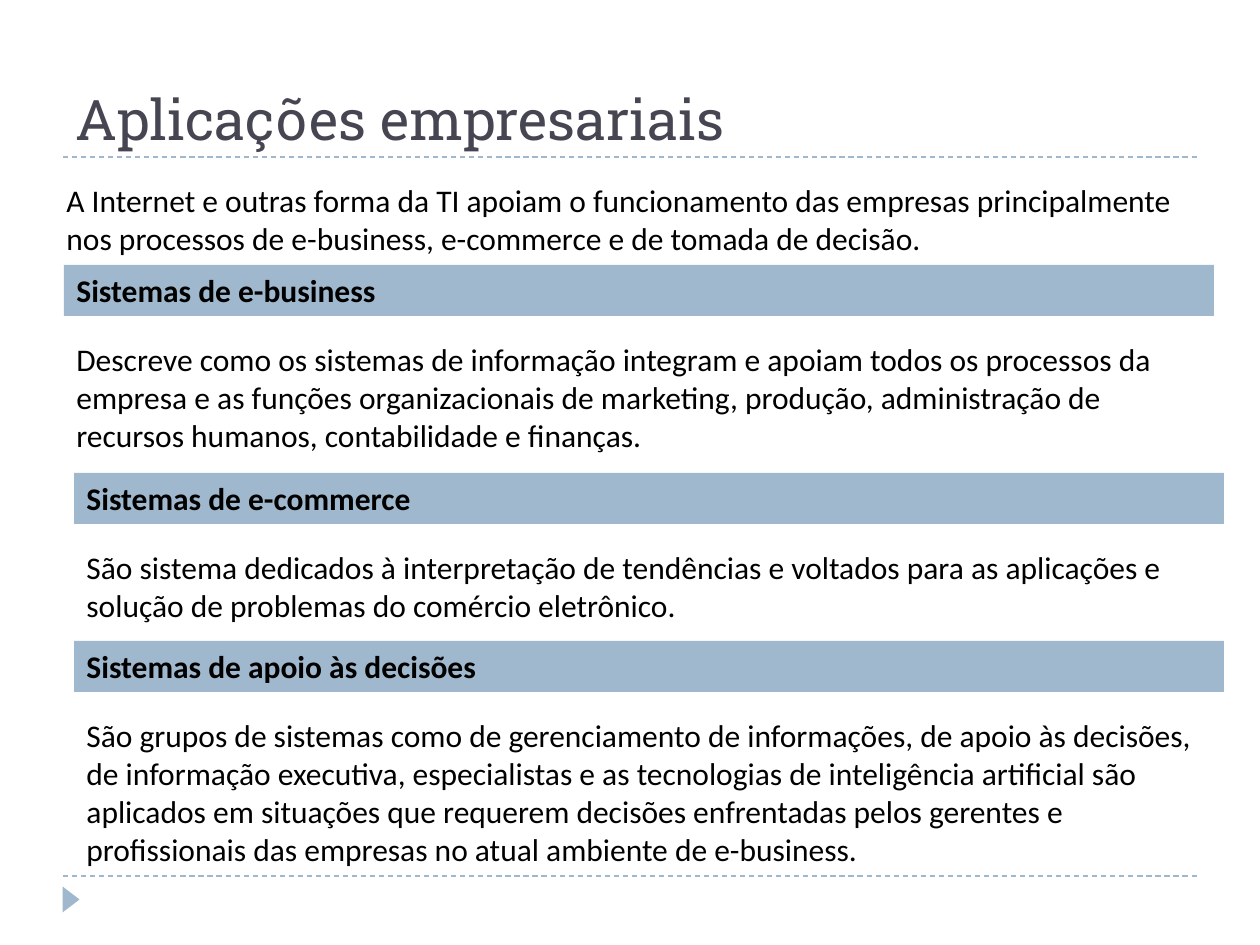
import pptx
import pptx.util
import pptx.dml.color
import pptx.enum.dml
import pptx.enum.shapes
import pptx.enum.text
import lxml.etree

RGB = pptx.dml.color.RGBColor
BLUE = RGB(0x9F, 0xB8, 0xCD)
SLATE = RGB(0x46, 0x46, 0x53)
BLACK = RGB(0, 0, 0)
KIND = pptx.enum.shapes.MSO_SHAPE
ANCHOR = pptx.enum.text.MSO_ANCHOR

TITLE = "Aplicações empresariais"
INTRO = ("A Internet e outras forma da TI apoiam o funcionamento das empresas "
         "principalmente nos processos de e-business, e-commerce e de tomada de decisão.")
# left, top, body height, heading, body
PARTS = [
    (64, 265, 127, "Sistemas de e-business",
     "Descreve como os sistemas de informação integram e apoiam todos os processos da "
     "empresa e as funções organizacionais de marketing, produção, administração de "
     "recursos humanos, contabilidade e finanças."),
    (74, 473, 89, "Sistemas de e-commerce",
     "São sistema dedicados à interpretação de tendências e voltados para as aplicações "
     "e solução de problemas do comércio eletrônico."),
    (74, 641, 165, "Sistemas de apoio às decisões",
     "São grupos de sistemas como de gerenciamento de informações, de apoio às decisões, "
     "de informação executiva, especialistas e as tecnologias de inteligência artificial "
     "são aplicados em situações que requerem decisões enfrentadas pelos gerentes e "
     "profissionais das empresas no atual ambiente de e-business."),
]
RULES = [157, 876]
LEFT, RIGHT = 63, 1197
WIDE, BAR, DROP = 1150, 51, 69


def px(*nums):
    return [round(n * 914400 / 126) for n in nums]


def add_rule(slide, y):
    kind = pptx.enum.shapes.MSO_CONNECTOR.STRAIGHT
    rule = slide.shapes.add_connector(kind, *px(LEFT, y, RIGHT, y))
    rule.line.color.rgb = BLUE
    rule.line.width = pptx.util.Pt(0.75)
    rule.line.dash_style = pptx.enum.dml.MSO_LINE.DASH
    props = rule.element.spPr
    lxml.etree.SubElement(props, pptx.oxml.ns.qn("a:effectLst"))


def add_shape(slide, kind, box):
    shape = slide.shapes.add_shape(kind, *px(*box))
    shape.shadow.inherit = False
    shape.fill.solid()
    shape.fill.fore_color.rgb = BLUE
    shape.line.fill.background()
    return shape


def add_text(slide, text, box, size=18, font="Calibri", color=BLACK,
             bold=False, anchor=ANCHOR.TOP, bar=False):
    """Put text in a plain box, or in a filled bar."""
    if bar:
        shape = add_shape(slide, KIND.RECTANGLE, box)
    else:
        shape = slide.shapes.add_textbox(*px(*box))
    frame = shape.text_frame
    frame.word_wrap = True
    frame.vertical_anchor = anchor
    para = frame.paragraphs[0]
    para.alignment = pptx.enum.text.PP_ALIGN.LEFT
    run = para.add_run()
    run.text = text
    run.font.size = pptx.util.Pt(size)
    run.font.name = font
    run.font.bold = bold
    run.font.color.rgb = color


def main():
    deck = pptx.Presentation()
    deck.slide_width, deck.slide_height = px(1260, 945)
    slide = deck.slides.add_slide(deck.slide_layouts[6])
    for y in RULES:
        add_rule(slide, y)
    add_shape(slide, KIND.ISOSCELES_TRIANGLE, (58, 891, 26, 17)).rotation = 90
    add_text(slide, TITLE, (LEFT, 32, RIGHT - LEFT, 126), size=32,
             font="Roboto Slab", color=SLATE, anchor=ANCHOR.BOTTOM)
    add_text(slide, INTRO, (54, 175, WIDE, 89))
    for left, top, high, head, body in PARTS:
        add_text(slide, head, (left, top, WIDE, BAR), bold=True, bar=True)
        add_text(slide, body, (left, top + DROP, WIDE, high))
    deck.save("out.pptx")


if __name__ == "__main__":
    main()
